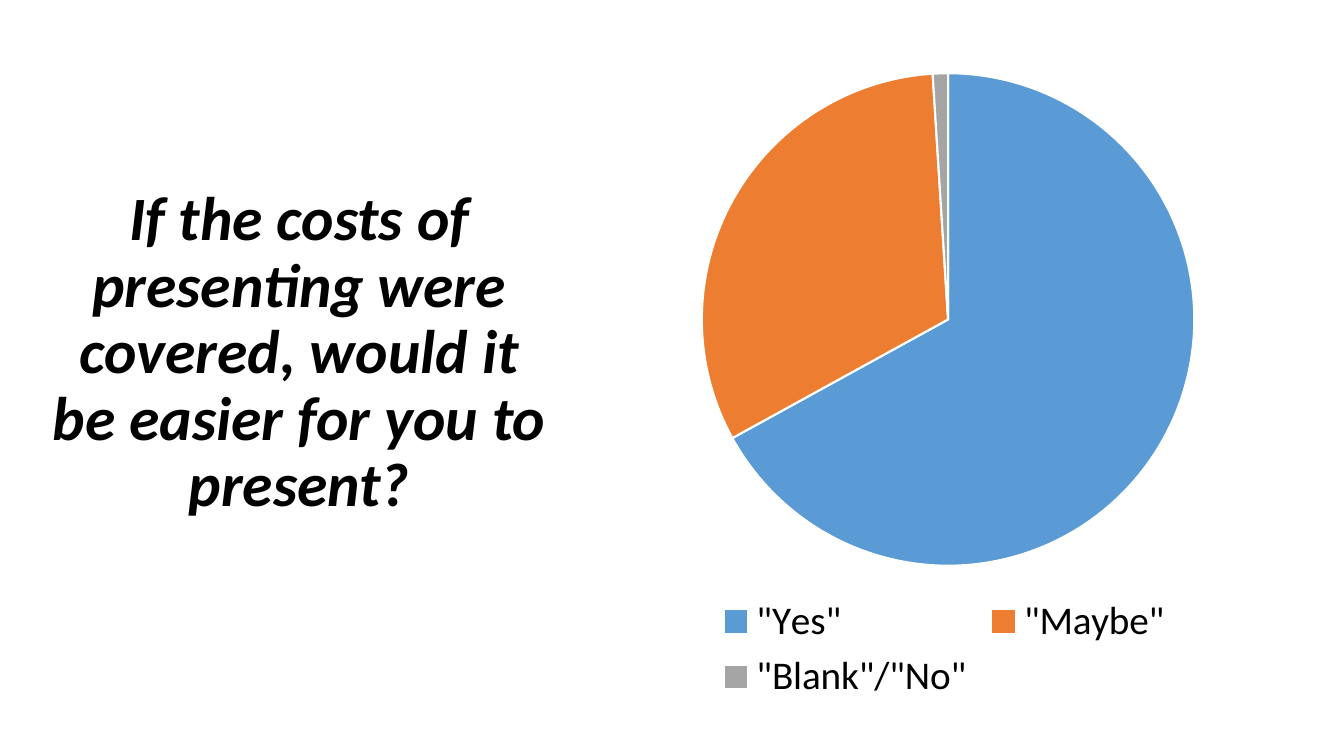
from lxml import etree
from pptx import Presentation
from pptx import util as u
from pptx.chart import data as chart_data
from pptx.dml import color
from pptx.enum import chart as charts, text
from pptx.oxml import ns

COLOURS = {
    "ink": "000000",
    "divider": "FFFFFF",
    "yes": "5B9BD5",
    "maybe": "ED7D31",
    "blank": "A5A5A5",
}
ANSWERS = [('"Yes"', 67, "yes"), ('"Maybe"', 32, "maybe"), ('"Blank"/"No"', 1, "blank")]
PIE_AREA = {"x": 0.17, "y": 0.02, "w": 0.67, "h": 0.76}


class SurveySlide:
    """Holds the style and the current slide of a survey result."""

    def __init__(self, page, font="Calibri"):
        self.page = page
        self.font = font

    def colour(self, name):
        return color.RGBColor.from_string(COLOURS[name])

    def style(self, font, size):
        font.name = self.font
        font.size = u.Pt(size)
        font.color.rgb = self.colour("ink")

    def question(self, wording, left, top, width, height):
        box = self.page.shapes.add_textbox(u.Cm(left), u.Cm(top), u.Cm(width), u.Cm(height))
        frame = box.text_frame
        frame.word_wrap = True
        frame.vertical_anchor = text.MSO_ANCHOR.MIDDLE
        frame.text = wording
        para = frame.paragraphs[0]
        para.alignment = text.PP_ALIGN.CENTER
        para.line_spacing = 0.9
        span = para.runs[0]
        self.style(span.font, 44)
        span.font.bold = True
        span.font.italic = True

    def pie(self, answers, left, top, width, height):
        data = chart_data.CategoryChartData()
        data.categories = [label for label, share, name in answers]
        data.add_series("Series 1", [share for label, share, name in answers])
        chart = self.page.shapes.add_chart(
            charts.XL_CHART_TYPE.PIE, u.Cm(left), u.Cm(top), u.Cm(width), u.Cm(height), data
        ).chart
        self.style(chart.font, 10)
        chart.has_title = False
        chart.has_legend = True
        chart.legend.position = charts.XL_LEGEND_POSITION.BOTTOM
        chart.legend.include_in_layout = False
        self.style(chart.legend.font, 28)
        plot = chart.plots[0]
        plot.vary_by_categories = True
        for index, (label, share, name) in enumerate(answers):
            slice_format = plot.series[0].points[index].format
            slice_format.fill.solid()
            slice_format.fill.fore_color.rgb = self.colour(name)
            slice_format.line.color.rgb = self.colour("divider")
            slice_format.line.width = u.Pt(1.5)
        self.place_plot(chart, PIE_AREA)

    def place_plot(self, chart, area):
        plot_area = chart.element.find(".//" + ns.qn("c:plotArea"))
        for old_layout in plot_area.findall(ns.qn("c:layout")):
            plot_area.remove(old_layout)
        layout = etree.Element(ns.qn("c:layout"))
        manual = etree.SubElement(layout, ns.qn("c:manualLayout"))
        settings = {"layoutTarget": "inner", "xMode": "edge", "yMode": "edge", **area}
        for tag, value in settings.items():
            etree.SubElement(manual, ns.qn("c:" + tag)).set("val", str(value))
        plot_area.insert(0, layout)


def main():
    deck = Presentation()
    deck.slide_width = u.Cm(33.87)
    deck.slide_height = u.Cm(19.05)
    slide = SurveySlide(deck.slides.add_slide(deck.slide_layouts[6]))
    slide.question(
        "If the costs of presenting were covered, would it be easier for you to present?",
        1.07, 1.19, 12.95, 15.44,
    )
    slide.pie(ANSWERS, 14.48, 1.52, 18.64, 16.33)
    deck.save("out.pptx")


if __name__ == "__main__":
    main()
